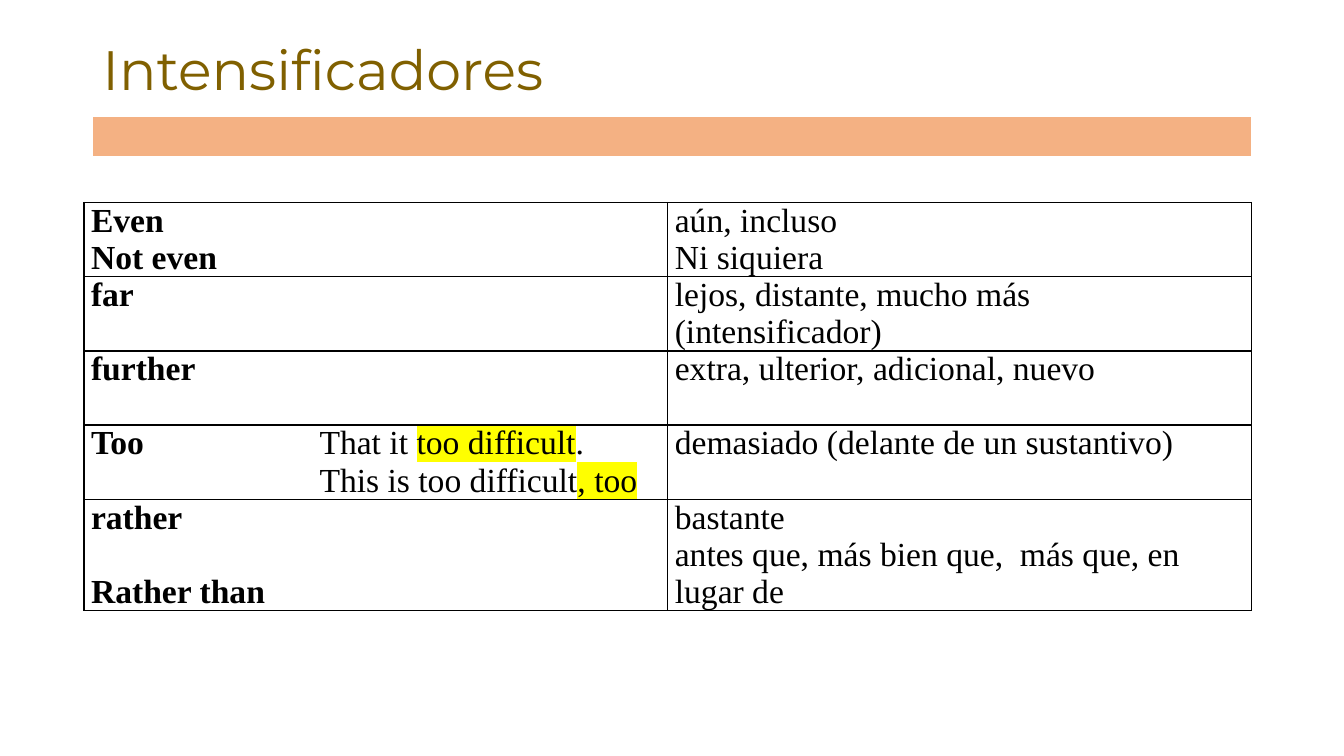
from dataclasses import dataclass

from lxml.etree import SubElement
from pptx import Presentation
from pptx.dml.color import RGBColor as Rgb
from pptx.enum.text import MSO_ANCHOR as Anchor, MSO_AUTO_SIZE as AutoSize, PP_ALIGN as Align
from pptx.oxml import parse_xml
from pptx.oxml.ns import nsdecls, qn
from pptx.util import Inches, Pt


@dataclass(frozen=True)
class Theme:
    title_font: str = "Montserrat"
    body_font: str = "Times New Roman"
    title_size: float = 39.6
    body_size: float = 24
    blank_line: float = 26.6
    title: str = "806000"
    bar: str = "F4B183"
    ink: str = "000000"
    paper: str = "FFFFFF"
    marker: str = "FFFF00"


@dataclass(frozen=True)
class Box:
    """Place on the slide, in grid units."""
    left: float
    top: float
    width: float
    height: float

    def emu(self):
        return [round(side * UNIT) for side in (self.left, self.top, self.width, self.height)]


@dataclass(frozen=True)
class Line:
    """One paragraph; text between asterisks is highlighted."""
    text: str
    lead: str = ""
    indent: float = 0
    before: float = 0


THEME = Theme()
SLIDE_WIDTH, SLIDE_HEIGHT = Inches(13.33), Inches(7.5)
UNIT = SLIDE_WIDTH / 160  # 160 columns by 90 rows of square units
EXAMPLE_INDENT = 27.2
CELL_INSET = Inches(0.07)

TITLE_BOX = Box(11, 4.8, 138, 7.6)
BAR_BOX = Box(11, 13.9, 138, 4.9)
GLOSSARY_BOX = Box(10, 24.1, 139, 44)

GLOSSARY = [
    ([Line("Even"), Line("Not even")], [Line("aún, incluso"), Line("Ni siquiera")]),
    ([Line("far")], [Line("lejos, distante, mucho más (intensificador)")]),
    ([Line("further")], [Line("extra, ulterior, adicional, nuevo")]),
    ([Line("That it *too difficult*.", lead="Too", indent=EXAMPLE_INDENT),
      Line("This is too difficult*, too*", indent=EXAMPLE_INDENT)],
     [Line("demasiado (delante de un sustantivo)")]),
    ([Line("rather"), Line("Rather than", before=THEME.blank_line)],
     [Line("bastante"), Line("antes que, más bien que,  más que, en lugar de")]),
]


def style_font(font, name, size, color, bold=False):
    font.name, font.size, font.bold = name, Pt(size), bold
    font.color.rgb = Rgb.from_string(color)


def style_cell(cell, fill, border, widths=(1, 1, 1, 1)):
    """Fill the cell and draw its left, right, top and bottom borders."""
    properties = cell._tc.get_or_add_tcPr()
    for side, width in zip("LRTB", widths):
        edge = SubElement(properties, qn(f"a:ln{side}"), w=str(Pt(width)))
        SubElement(SubElement(edge, qn("a:solidFill")), qn("a:srgbClr"), val=border)
    cell.fill.solid()
    cell.fill.fore_color.rgb = Rgb.from_string(fill)


def add_plain_table(slide, box, rows, columns):
    table = slide.shapes.add_table(rows, columns, *box.emu()).table
    table.first_row = table.horz_banding = False
    return table


def highlight(run):
    run.font.color.rgb = Rgb.from_string(THEME.ink)
    marker = parse_xml(f'<a:highlight {nsdecls("a")}><a:srgbClr val="{THEME.marker}"/></a:highlight>')
    run._r.get_or_add_rPr().find(qn("a:solidFill")).addnext(marker)


def write_line(paragraph, line, bold):
    style_font(paragraph.font, THEME.body_font, THEME.body_size, THEME.ink, bold)
    if line.before:
        paragraph.space_before = Pt(line.before)
    if line.lead:
        lead = paragraph.add_run()
        lead.text = line.lead + "\t"
        lead.font.bold = True
    if line.indent:
        properties = paragraph._p.get_or_add_pPr()
        offset = round(line.indent * UNIT)
        properties.set("marL", str(offset))
        properties.set("indent", str(-offset if line.lead else 0))
        stops = parse_xml(f'<a:tabLst {nsdecls("a")}><a:tab pos="{offset}" algn="l"/></a:tabLst>')
        properties.find(qn("a:defRPr")).addprevious(stops)
    for part, text in enumerate(line.text.split("*")):
        if text:
            run = paragraph.add_run()
            run.text = text
            if part % 2:
                highlight(run)


def write_cell(cell, lines, bold):
    cell.margin_left = cell.margin_right = CELL_INSET
    cell.margin_top = cell.margin_bottom = 0
    style_cell(cell, THEME.paper, THEME.ink)
    frame = cell.text_frame
    for number, line in enumerate(lines):
        paragraph = frame.add_paragraph() if number else frame.paragraphs[0]
        write_line(paragraph, line, bold and not line.indent)


def place_title(slide, box, text):
    title = slide.shapes.title
    title.left, title.top, title.width, title.height = box.emu()
    frame = title.text_frame
    frame.text = text
    frame.auto_size = AutoSize.NONE
    frame.vertical_anchor = Anchor.MIDDLE
    heading = frame.paragraphs[0]
    heading.alignment = Align.LEFT
    heading.line_spacing = 0.9
    style_font(heading.font, THEME.title_font, THEME.title_size, THEME.title)


def place_bar(slide, box):
    bar = add_plain_table(slide, box, 1, 1)
    style_cell(bar.cell(0, 0), THEME.bar, THEME.paper, (1, 1, 1, 3))


def place_glossary(slide, box, entries):
    glossary = add_plain_table(slide, box, len(entries), 2)
    for row, (term, meaning) in enumerate(entries):
        write_cell(glossary.cell(row, 0), term, bold=True)
        write_cell(glossary.cell(row, 1), meaning, bold=False)


def main():
    deck = Presentation()
    deck.slide_width, deck.slide_height = SLIDE_WIDTH, SLIDE_HEIGHT
    slide = deck.slides.add_slide(deck.slide_layouts.get_by_name("Title Only"))
    place_title(slide, TITLE_BOX, "Intensificadores")
    place_bar(slide, BAR_BOX)
    place_glossary(slide, GLOSSARY_BOX, GLOSSARY)
    deck.save("out.pptx")


if __name__ == "__main__":
    main()
